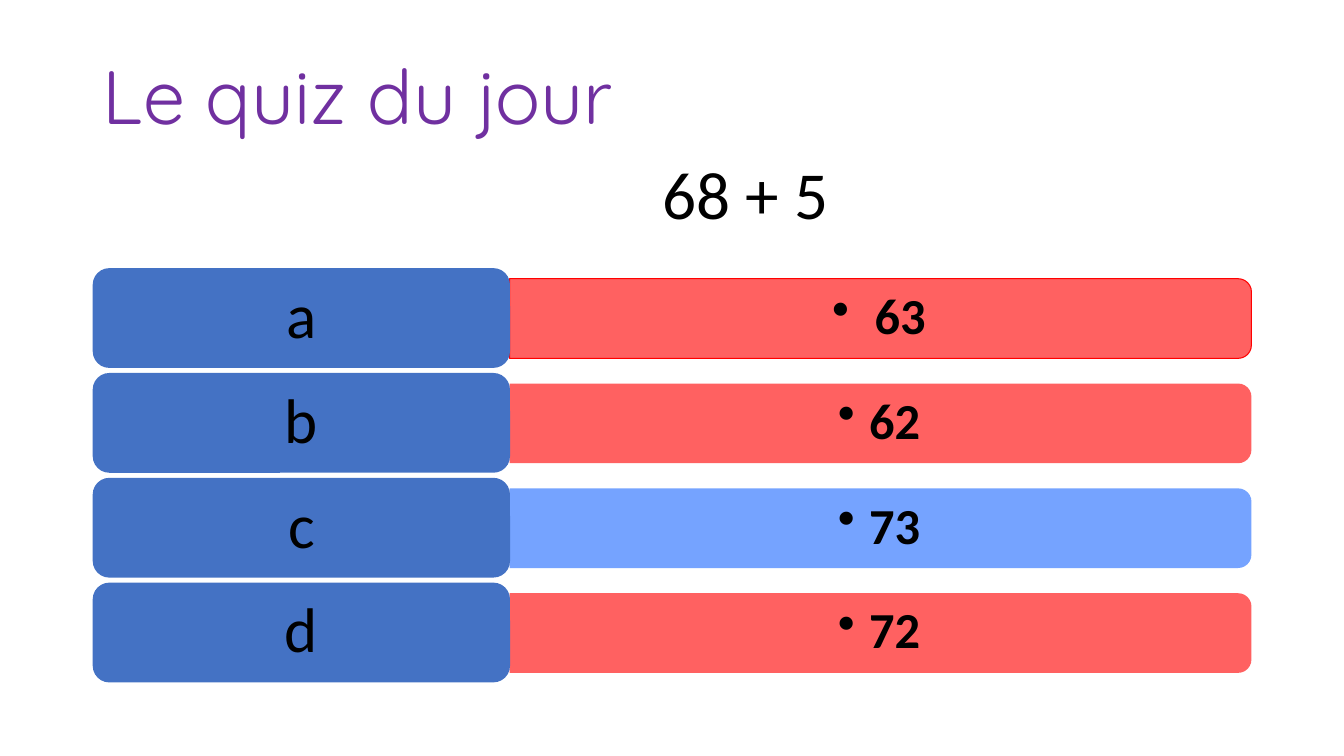
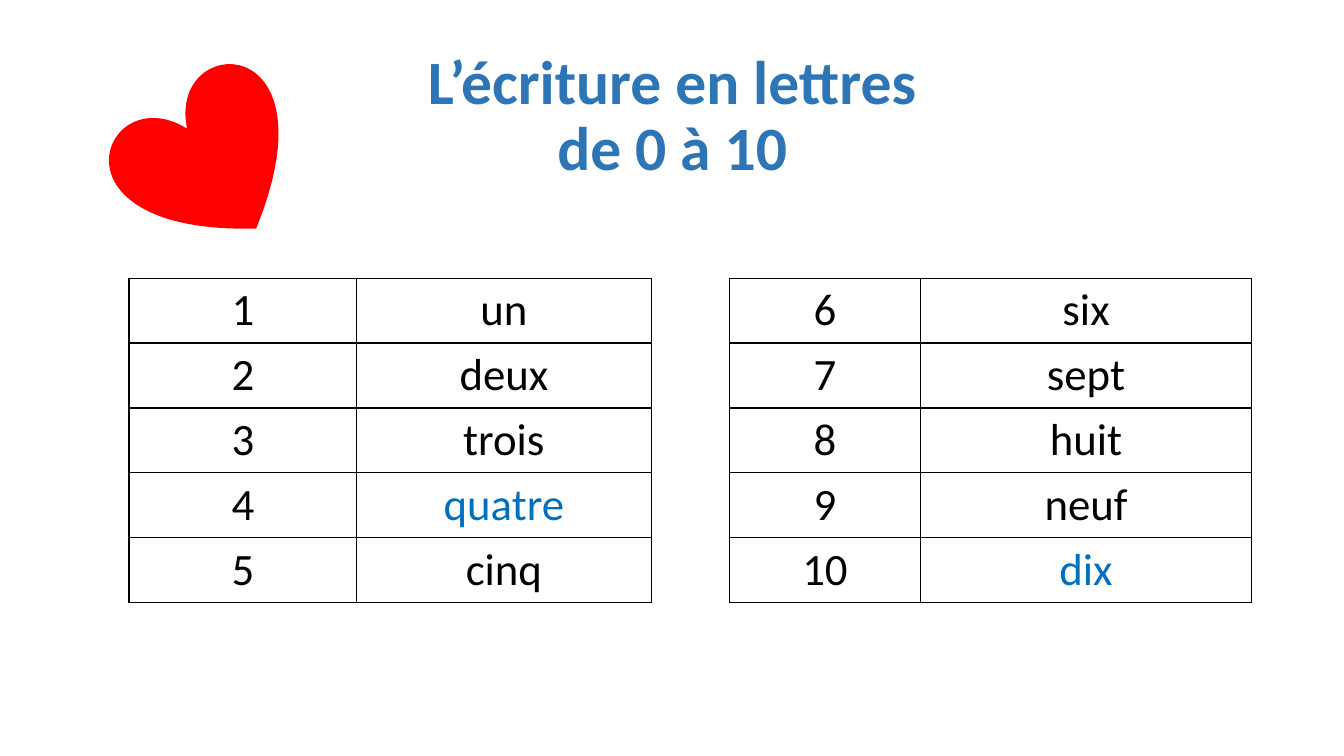
from dataclasses import dataclass

from lxml import etree
from pptx import Presentation
from pptx.dml.color import RGBColor
from pptx.enum.shapes import MSO_SHAPE
from pptx.enum.text import MSO_ANCHOR, PP_ALIGN
from pptx.oxml.ns import qn
from pptx.util import Emu, Pt

PX = 9144  # 100 px to the inch
BLACK = RGBColor(0x00, 0x00, 0x00)
PURPLE = RGBColor(0x70, 0x30, 0xA0)
NAVY = RGBColor(0x2E, 0x75, 0xB6)
BLUE = RGBColor(0x44, 0x72, 0xC4)
SKY = RGBColor(0x66, 0x99, 0xFF)
CORAL = RGBColor(0xFF, 0x50, 0x50)
RED = RGBColor(0xFF, 0x00, 0x00)
ACCENT = RGBColor(0x00, 0x70, 0xC0)
BODY = "Calibri"
HEAD = "Quicksand"
LEFT, CENTER = PP_ALIGN.LEFT, PP_ALIGN.CENTER
MIDDLE = MSO_ANCHOR.MIDDLE
ROUND = MSO_SHAPE.ROUNDED_RECTANGLE
TAB = MSO_SHAPE.ROUND_2_SAME_RECTANGLE
HEART = MSO_SHAPE.HEART


@dataclass(frozen=True)
class Box:
    x: int
    y: int
    w: int
    h: int

    def emu(self) -> list[Emu]:
        return [Emu(v * PX) for v in (self.x, self.y, self.w, self.h)]


@dataclass(frozen=True)
class Font:
    size: int
    color: RGBColor = BLACK
    name: str = BODY
    bold: bool = False


@dataclass(frozen=True)
class Choice:
    label: str
    answer: str
    fill: RGBColor = CORAL
    line: RGBColor | None = None


@dataclass(frozen=True)
class Grid:
    x: int
    cols: tuple[int, int]
    first: int
    words: tuple[str, ...]
    marked: str


LABEL = Font(45)
ANSWER = Font(36, bold=True)
CELL = Font(32)
MARK = Font(32, ACCENT)
CHOICES = (
    Choice("a", " 63", line=RED),
    Choice("b", "62"),
    Choice("c", "73", SKY),
    Choice("d", "72"),
)
GRIDS = (
    Grid(128, (226, 292), 1, ("un", "deux", "trois", "quatre", "cinq"), "quatre"),
    Grid(724, (189, 329), 6, ("six", "sept", "huit", "neuf", "dix"), "dix"),
)


def write(frame, lines: list[str], font: Font, align=CENTER, gap: float = 1.0) -> None:
    frame.word_wrap = True
    for i, line in enumerate(lines):
        para = frame.add_paragraph() if i else frame.paragraphs[0]
        para.alignment = align
        para.line_spacing = gap
        run = para.add_run()
        run.text = line
        run.font.size = Pt(font.size)
        run.font.name = font.name
        run.font.bold = font.bold
        run.font.color.rgb = font.color


def add_slide(deck, top: int, lines: list[str], font: Font, align):
    slide = deck.slides.add_slide(deck.slide_layouts[5])
    title = slide.shapes.title
    title.left, title.top, title.width, title.height = Box(92, top, 1150, 145).emu()
    title.text_frame.vertical_anchor = MIDDLE
    write(title.text_frame, lines, font, align, 0.9)
    return slide


def add_shape(slide, kind, box: Box, fill: RGBColor, line: RGBColor | None = None,
              width: float = 1):
    shape = slide.shapes.add_shape(kind, *box.emu())
    shape.shadow.inherit = False
    shape.fill.solid()
    shape.fill.fore_color.rgb = fill
    if line is None:
        shape.line.fill.background()
    else:
        shape.line.color.rgb = line
        shape.line.width = Pt(width)
    return shape


def add_text(slide, box: Box, text: str, font: Font, gap: float = 1.0):
    frame = slide.shapes.add_textbox(*box.emu()).text_frame
    write(frame, [text], font, gap=gap)
    return frame


def fade(shape, percent: int) -> None:
    """Set the opacity of a solid fill."""
    color = shape.fill._xPr.find(qn("a:solidFill"))[0]
    etree.SubElement(color, qn("a:alpha")).set("val", str(percent * 1000))


def bullet(para, indent: int) -> None:
    props = para._p.get_or_add_pPr()
    props.set("marL", str(indent * PX))
    props.set("indent", str(-indent * PX))
    etree.SubElement(props, qn("a:buChar")).set("char", "•")


def add_choice(slide, choice: Choice, top: int) -> None:
    label = Box(92, top, 414, 99)
    bar = Box(label.x + label.w, top + 10, 736, 79)
    # The tab is drawn upright around the bar's centre, then turned.
    turn = (bar.w - bar.h) // 2
    upright = Box(bar.x + turn, bar.y - turn, bar.h, bar.w)
    tab = add_shape(slide, TAB, upright, choice.fill, choice.line, 0.75)
    tab.rotation = 90
    fade(tab, 90)
    frame = add_text(slide, Box(bar.x, top + 14, 732, 71), choice.answer, ANSWER, 0.9)
    frame.vertical_anchor = MIDDLE
    bullet(frame.paragraphs[0], 31)
    shape = add_shape(slide, ROUND, label, BLUE)
    shape.text_frame.vertical_anchor = MIDDLE
    write(shape.text_frame, [choice.label], LABEL, gap=0.9)


def frame_cell(cell) -> None:
    """Give a cell thin black borders and no fill."""
    props = cell._tc.get_or_add_tcPr()
    for side in ("lnL", "lnR", "lnT", "lnB"):
        line = etree.SubElement(props, qn(f"a:{side}"), w=str(Pt(1)))
        fill = etree.SubElement(line, qn("a:solidFill"))
        etree.SubElement(fill, qn("a:srgbClr"), val=str(BLACK))
    cell.fill.background()


def add_grid(slide, grid: Grid) -> None:
    count = len(grid.words)
    box = Box(grid.x, 276, sum(grid.cols), 64 * count)
    table = slide.shapes.add_table(count, len(grid.cols), *box.emu()).table
    table.first_row = table.horz_banding = False
    for col, width in zip(table.columns, grid.cols):
        col.width = Emu(width * PX)
    for r, word in enumerate(grid.words):
        for c, text in enumerate((str(grid.first + r), word)):
            cell = table.cell(r, c)
            frame_cell(cell)
            write(cell.text_frame, [text], MARK if text == grid.marked else CELL)


def quiz(deck) -> None:
    slide = add_slide(deck, 27, ["Le quiz du jour"], Font(54, PURPLE, HEAD), LEFT)
    for i, choice in enumerate(CHOICES):
        add_choice(slide, choice, 266 + 104 * i)
    add_text(slide, Box(612, 146, 255, 91), "68 + 5", Font(48))


def words(deck) -> None:
    lines = ["L’écriture en lettres", "de 0 à 10"]
    slide = add_slide(deck, 44, lines, Font(44, NAVY, bold=True), CENTER)
    for grid in GRIDS:
        add_grid(slide, grid)
    heart = add_shape(slide, HEART, Box(121, 83, 176, 157), RED, RED)
    heart.rotation = 325.3


def main() -> None:
    deck = Presentation()
    deck.slide_width, deck.slide_height = Emu(12192000), Emu(750 * PX)
    quiz(deck)
    words(deck)
    deck.save("out.pptx")


if __name__ == "__main__":
    main()
